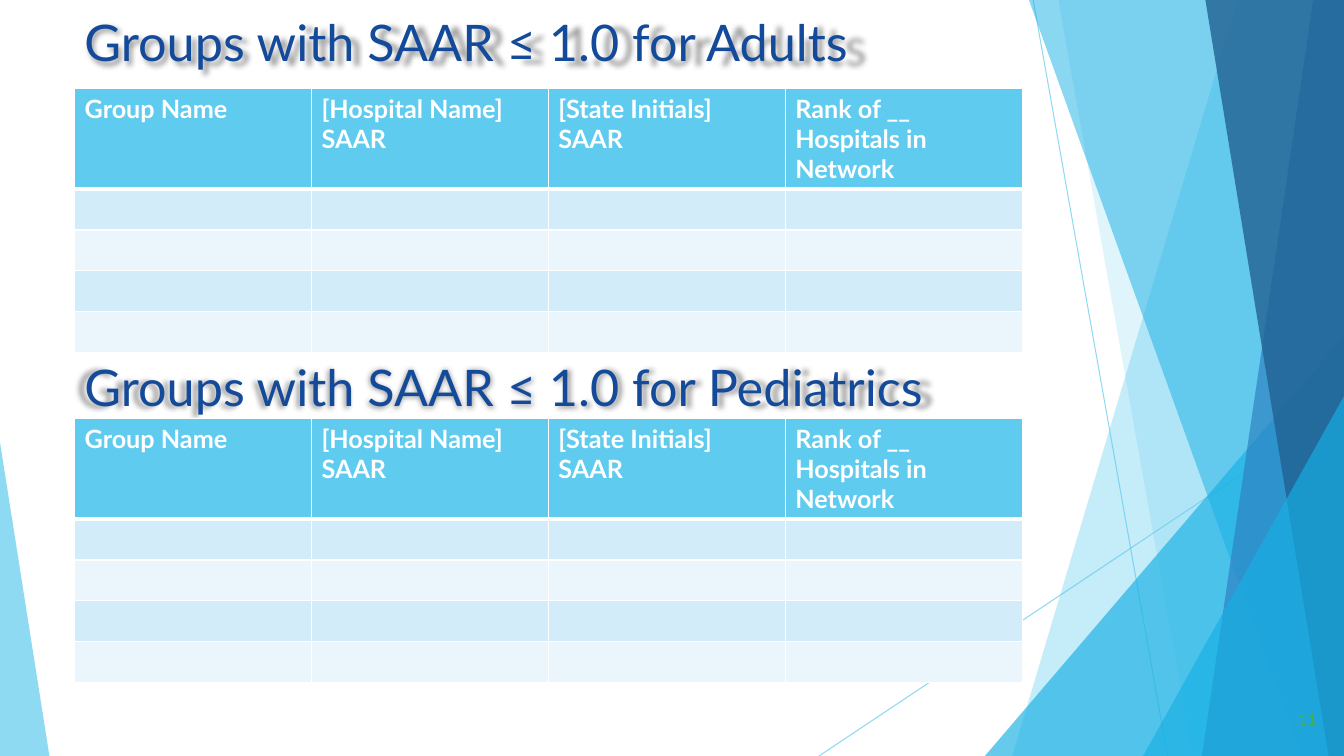
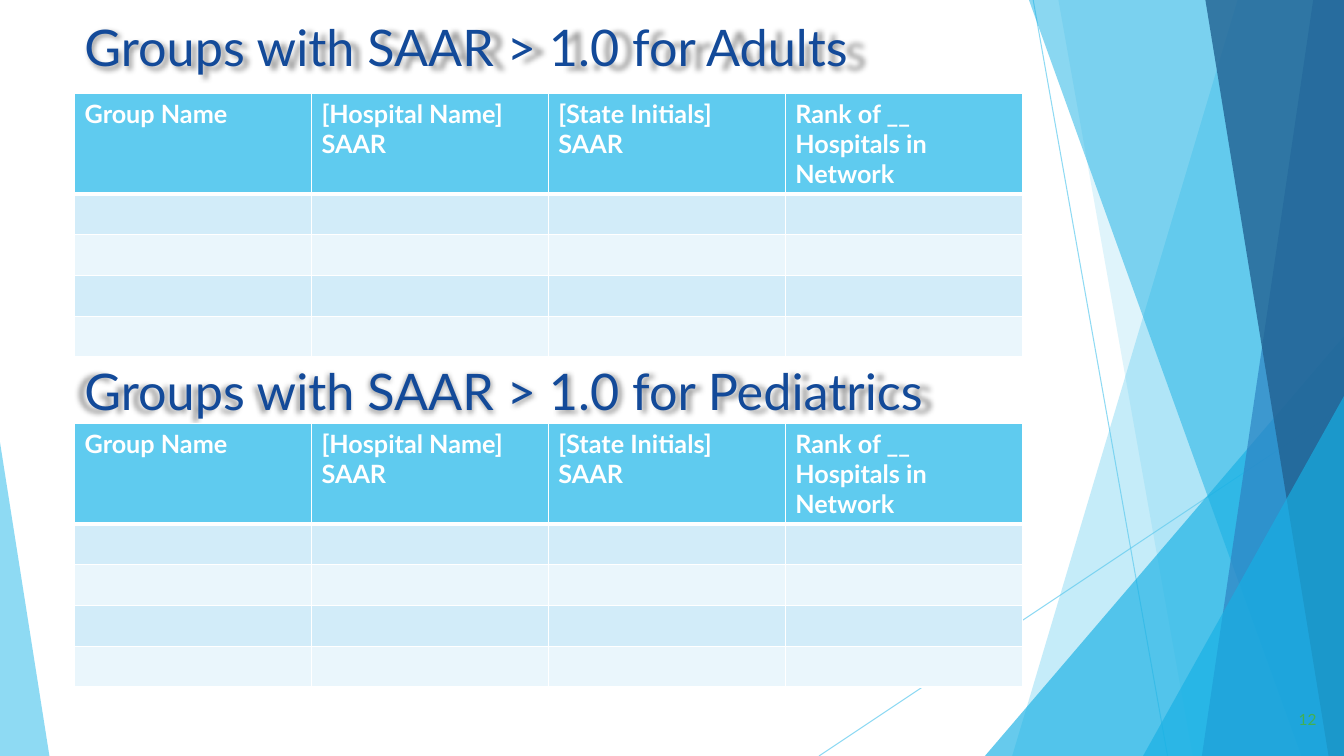
import pptx
import pptx.util
import pptx.dml.color
import pptx.enum.shapes
import pptx.enum.text
import pptx.oxml
import pptx.oxml.ns
import lxml.etree

Pt = pptx.util.Pt
RGBColor = pptx.dml.color.RGBColor
qn = pptx.oxml.ns.qn
ALIGN = pptx.enum.text.PP_ALIGN

# Shared style
FONT = "Lato"
WHITE = RGBColor(0xFF, 0xFF, 0xFF)
SKY = RGBColor(0x5F, 0xCB, 0xEF)
CYAN = RGBColor(0x17, 0xB0, 0xE4)
BLUE = RGBColor(0x2E, 0x83, 0xC3)
NAVY = RGBColor(0x22, 0x62, 0x92)
TITLE_BLUE = RGBColor(0x13, 0x4A, 0x99)
NUMBER_GREEN = RGBColor(0x42, 0xB0, 0x51)
ROW_FILLS = [RGBColor(0xD2, 0xEC, 0xF9), RGBColor(0xEA, 0xF6, 0xFC)]

# Content: slide number, downward shift, comparison with 1.0
SLIDES = [(11, 0, "≤"), (12, 3.4, ">")]
HEADERS = ["Group Name", "[Hospital Name] SAAR", "[State Initials] SAAR",
           "Rank of __ Hospitals in Network"]
# Patient group, heading top, table top, shadow direction in degrees and distance
SECTIONS = [("Adults", 1.9, 63.2, 45, 2), ("Pediatrics", 248, 298.9, 180, 6)]

# Layout in points
WIDTH, HEIGHT = 960, 540
LEFT, CONTENT_WIDTH, HEADING_HEIGHT = 53.3, 676.8, 55.4
HEADER_HEIGHT, ROW_HEIGHT, BODY_ROWS = 70.6, 29.1, 4

# Background: lines, then facets from back to front
LINES = [((738, 0), (834, HEIGHT)), ((WIDTH, 290), (585, HEIGHT))]
LINE_OPACITY = 70
# Bands: top left, bottom left, colour, opacity; all reach the right edge
# Triangles: left, top, width, apex position, colour, opacity
FACETS = [
    ("band", (884, 723), SKY, 36),
    ("band", (756, 852), SKY, 20),
    ("triangle", (703.5, 240, 256.5, 1), CYAN, 66),
    ("band", (735, 929.5), CYAN, 50),
    ("band", (938, 858.5), BLUE, 70),
    ("band", (861, 949), NAVY, 80),
    ("triangle", (816.5, 283, 143.5, 1), CYAN, 66),
    ("triangle", (0, 316, 35.3, 0), SKY, 70),
]


def set_opacity(properties, percent):
    color = next(properties.iter(qn("a:srgbClr")))
    lxml.etree.SubElement(color, qn("a:alpha"), val=str(percent * 1000))


def add_background(slide):
    for (x1, y1), (x2, y2) in LINES:
        line = slide.shapes.add_connector(
            pptx.enum.shapes.MSO_CONNECTOR.STRAIGHT, Pt(x1), Pt(y1), Pt(x2), Pt(y2))
        line.line.color.rgb = SKY
        line.line.width = Pt(0.75)
        properties = line._element.spPr
        set_opacity(properties, LINE_OPACITY)
        lxml.etree.SubElement(properties, qn("a:effectLst"))

    for kind, geometry, color, opacity in FACETS:
        if kind == "band":
            top_left, bottom_left = geometry
            builder = slide.shapes.build_freeform(Pt(top_left), 0)
            builder.add_line_segments([(Pt(WIDTH), 0), (Pt(WIDTH), Pt(HEIGHT)),
                                       (Pt(bottom_left), Pt(HEIGHT))], close=True)
            shape = builder.convert_to_shape()
        else:
            left, top, width, apex = geometry
            shape = slide.shapes.add_shape(
                pptx.enum.shapes.MSO_SHAPE.ISOSCELES_TRIANGLE,
                Pt(left), Pt(top), Pt(width), Pt(HEIGHT - top))
            shape.adjustments[0] = apex
        shape.shadow.inherit = False
        shape.fill.solid()
        shape.fill.fore_color.rgb = color
        shape.line.fill.background()
        set_opacity(shape._element.spPr, opacity)


def write_text(frame, text, size, color, bold=False, align=ALIGN.LEFT):
    frame.word_wrap = True
    paragraph = frame.paragraphs[0]
    paragraph.alignment = align
    run = paragraph.add_run()
    run.text = text
    run.font.name = FONT
    run.font.size = Pt(size)
    run.font.bold = bold
    run.font.color.rgb = color


def add_text_box(slide, text, left, top, width, height, **text_format):
    box = slide.shapes.add_textbox(Pt(left), Pt(top), Pt(width), Pt(height))
    box.text_frame.vertical_anchor = pptx.enum.text.MSO_ANCHOR.MIDDLE
    write_text(box.text_frame, text, **text_format)
    return box


def add_text_shadow(box, direction, distance):
    effects = lxml.etree.SubElement(box._element.spPr, qn("a:effectLst"))
    shadow = lxml.etree.SubElement(
        effects, qn("a:outerShdw"), blurRad=str(Pt(4)), dist=str(Pt(distance)),
        dir=str(direction * 60000), sx="102000", sy="102000", algn="tl", rotWithShape="0")
    color = lxml.etree.SubElement(shadow, qn("a:srgbClr"), val="000000")
    lxml.etree.SubElement(color, qn("a:alpha"), val="40000")


def set_borders(cell, **widths):
    properties = cell._tc.get_or_add_tcPr()
    for position, side in enumerate("LRTB"):
        border = lxml.etree.Element(qn("a:ln" + side), w=str(Pt(widths.get(side, 1))))
        fill = lxml.etree.SubElement(border, qn("a:solidFill"))
        lxml.etree.SubElement(fill, qn("a:srgbClr"), val=str(WHITE))
        properties.insert(position, border)


def add_group_table(slide, top):
    table = slide.shapes.add_table(
        BODY_ROWS + 1, len(HEADERS), Pt(LEFT), Pt(top), Pt(CONTENT_WIDTH),
        Pt(HEADER_HEIGHT + BODY_ROWS * ROW_HEIGHT)).table
    for column in table.columns:
        column.width = Pt(CONTENT_WIDTH / len(HEADERS))
    for index, row in enumerate(table.rows):
        row.height = Pt(ROW_HEIGHT if index else HEADER_HEIGHT)
        for header, cell in zip(HEADERS, row.cells):
            cell.fill.solid()
            cell.fill.fore_color.rgb = ROW_FILLS[(index - 1) % 2] if index else SKY
            # A thick rule separates the header from the body
            set_borders(cell, B=1 if index else 3, T=3 if index == 1 else 1)
            if index == 0:
                write_text(cell.text_frame, header, size=18, color=WHITE, bold=True)


def main():
    presentation = pptx.Presentation()
    presentation.slide_width, presentation.slide_height = Pt(WIDTH), Pt(HEIGHT)
    for number, shift, comparison in SLIDES:
        slide = presentation.slides.add_slide(presentation.slide_layouts[6])
        add_background(slide)
        add_text_box(slide, str(number), 918.7, 503.3, 28.8, 20.9,
                     size=11, color=NUMBER_GREEN, align=ALIGN.RIGHT)
        for group, heading_top, table_top, direction, distance in SECTIONS:
            heading = add_text_box(
                slide, f"Groups with SAAR {comparison} 1.0 for {group}",
                LEFT, heading_top + shift, CONTENT_WIDTH, HEADING_HEIGHT,
                size=36, color=TITLE_BLUE)
            add_text_shadow(heading, direction, distance)
            add_group_table(slide, table_top + shift)
    presentation.save("out.pptx")


if __name__ == "__main__":
    main()
